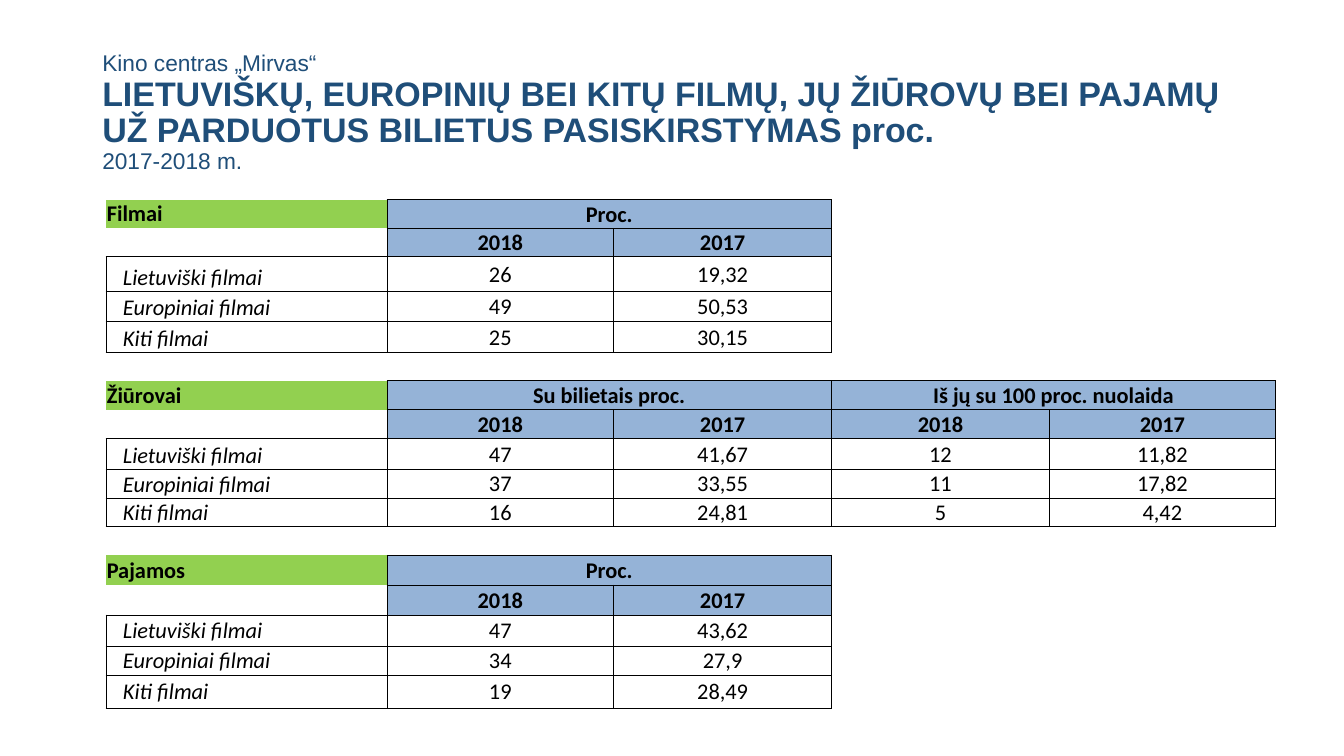
import dataclasses

import lxml.etree
import pptx
import pptx.dml.color
import pptx.enum.text
import pptx.oxml.ns
import pptx.util

Pt = pptx.util.Pt
Color = pptx.dml.color.RGBColor.from_string
Align = pptx.enum.text.PP_ALIGN
Anchor = pptx.enum.text.MSO_ANCHOR
qualified = pptx.oxml.ns.qn


@dataclasses.dataclass(frozen=True)
class Theme:
    title_font: str = "Arial"
    table_font: str = "Calibri"
    title_color: str = "1F4E79"
    text_color: str = "000000"
    label_fill: str = "92D050"
    header_fill: str = "95B3D7"
    title_size: float = 24.3
    subtitle_size: float = 16.2
    table_size: float = 16
    border_width: float = 0.5
    cell_margin: float = 0.72
    film_indent: float = 11.5


@dataclasses.dataclass(frozen=True)
class Section:
    label: str
    groups: tuple
    values: tuple
    label_anchor: Anchor
    film_anchor: Anchor


THEME = Theme()
YEARS = ("2018", "2017")
FILMS = ("Lietuviški filmai", "Europiniai filmai", "Kiti filmai")
SECTIONS = (
    Section("Filmai", ("Proc.",),
            (("26", "19,32"), ("49", "50,53"), ("25", "30,15")),
            Anchor.TOP, Anchor.BOTTOM),
    Section("Žiūrovai", ("Su bilietais proc.", "Iš jų su 100 proc. nuolaida"),
            (("47", "41,67", "12", "11,82"), ("37", "33,55", "11", "17,82"),
             ("16", "24,81", "5", "4,42")),
            Anchor.TOP, Anchor.BOTTOM),
    Section("Pajamos", ("Proc.",),
            (("47", "43,62"), ("34", "27,9"), ("19", "28,49")),
            Anchor.BOTTOM, Anchor.MIDDLE),
)
TITLE_LINES = (
    ("Kino centras „Mirvas“", THEME.subtitle_size, False),
    ("LIETUVIŠKŲ, EUROPINIŲ BEI KITŲ FILMŲ, JŲ ŽIŪROVŲ BEI PAJAMŲ "
     "UŽ PARDUOTUS BILIETUS PASISKIRSTYMAS proc.", THEME.title_size, True),
    ("2017-2018 m.", THEME.subtitle_size, False),
)
COLUMN_WIDTHS = (200.8, 162, 155.6, 155.6, 161.5)
ROW_HEIGHTS = (20.4, 20.4, 24.6, 21.8, 21.8, 20.4,
               20.7, 20.7, 21.8, 20.7, 20, 20.7,
               21.4, 21.4, 22.1, 21, 23.6)
SECTION_STEP = 6  # two header rows, three films, one spacer


def add_span(para, text, font, size, color, bold=False, italic=False):
    span = para.add_run()
    span.text = text
    span.font.name = font
    span.font.size = Pt(size)
    span.font.color.rgb = Color(color)
    span.font.bold = bold
    span.font.italic = italic


def add_title(page, left, top, width, height):
    box = page.shapes.add_textbox(Pt(left), Pt(top), Pt(width), Pt(height))
    frame = box.text_frame
    frame.word_wrap = True
    frame.vertical_anchor = Anchor.MIDDLE
    for index, (text, size, bold) in enumerate(TITLE_LINES):
        para = frame.add_paragraph() if index else frame.paragraphs[0]
        para.line_spacing = 0.9
        add_span(para, text, THEME.title_font, size, THEME.title_color, bold)


def write_cell(cell, text, fill=None, anchor=Anchor.MIDDLE, align=Align.CENTER,
               indent=0, bold=False, italic=False):
    cell.vertical_anchor = anchor
    cell.margin_left = Pt(THEME.cell_margin + indent)
    para = cell.text_frame.paragraphs[0]
    para.alignment = align
    add_span(para, text, THEME.table_font, THEME.table_size,
             THEME.text_color, bold, italic)
    if fill:
        cell.fill.solid()
        cell.fill.fore_color.rgb = Color(fill)


def prepare_cell(cell, row, column, framed):
    """Clear the cell and draw each edge that touches a framed cell."""
    cell.margin_left = cell.margin_right = cell.margin_top = Pt(THEME.cell_margin)
    cell.margin_bottom = 0
    properties = cell._tc.get_or_add_tcPr()
    neighbours = {"lnL": (row, column - 1), "lnR": (row, column + 1),
                  "lnT": (row - 1, column), "lnB": (row + 1, column)}
    for tag, neighbour in neighbours.items():
        line = lxml.etree.SubElement(properties, qualified(f"a:{tag}"))
        if (row, column) in framed or neighbour in framed:
            line.set("w", str(int(Pt(THEME.border_width))))
            solid = lxml.etree.SubElement(line, qualified("a:solidFill"))
            lxml.etree.SubElement(solid, qualified("a:srgbClr"), val=THEME.text_color)
        else:
            lxml.etree.SubElement(line, qualified("a:noFill"))
    cell.fill.background()
    # Keeps empty rows no taller than the rows with text
    ending = lxml.etree.SubElement(cell.text_frame.paragraphs[0]._p,
                                   qualified("a:endParaRPr"))
    ending.set("sz", str(THEME.table_size * 100))


def framed_cells():
    framed = set()
    for index, section in enumerate(SECTIONS):
        top = index * SECTION_STEP
        columns = range(1, 1 + len(section.groups) * len(YEARS))
        framed.update((top + row, column) for row in range(5) for column in columns)
        framed.update((top + row, 0) for row in range(2, 5))
    return framed


def fill_section(table, top, section):
    # Label and two header rows
    write_cell(table.cell(top, 0), section.label, THEME.label_fill,
               section.label_anchor, Align.LEFT, bold=True)
    for index, group in enumerate(section.groups):
        first = 1 + index * len(YEARS)
        table.cell(top, first).merge(table.cell(top, first + len(YEARS) - 1))
        write_cell(table.cell(top, first), group, THEME.header_fill, bold=True)
        for offset, year in enumerate(YEARS):
            write_cell(table.cell(top + 1, first + offset), year,
                       THEME.header_fill, bold=True)
    # Film rows
    for row, (film, values) in enumerate(zip(FILMS, section.values), top + 2):
        write_cell(table.cell(row, 0), film, anchor=section.film_anchor,
                   align=Align.LEFT, indent=THEME.film_indent, italic=True)
        for column, value in enumerate(values, 1):
            write_cell(table.cell(row, column), value)


def add_film_table(page, left, top, width, height):
    table = page.shapes.add_table(len(ROW_HEIGHTS), len(COLUMN_WIDTHS), Pt(left),
                                  Pt(top), Pt(width), Pt(height)).table
    table.first_row = table.horz_banding = False
    for column, column_width in zip(table.columns, COLUMN_WIDTHS):
        column.width = Pt(column_width)
    for row, row_height in zip(table.rows, ROW_HEIGHTS):
        row.height = Pt(row_height)
    framed = framed_cells()
    for row in range(len(ROW_HEIGHTS)):
        for column in range(len(COLUMN_WIDTHS)):
            prepare_cell(table.cell(row, column), row, column, framed)
    for index, section in enumerate(SECTIONS):
        fill_section(table, index * SECTION_STEP, section)


def main():
    deck = pptx.Presentation()
    deck.slide_width, deck.slide_height = Pt(960), Pt(540)
    page = deck.slides.add_slide(deck.slide_layouts[6])
    add_title(page, 66, 28.8, 828, 104.4)
    add_film_table(page, 75.6, 142.6, sum(COLUMN_WIDTHS), sum(ROW_HEIGHTS))
    deck.save("out.pptx")


if __name__ == "__main__":
    main()
